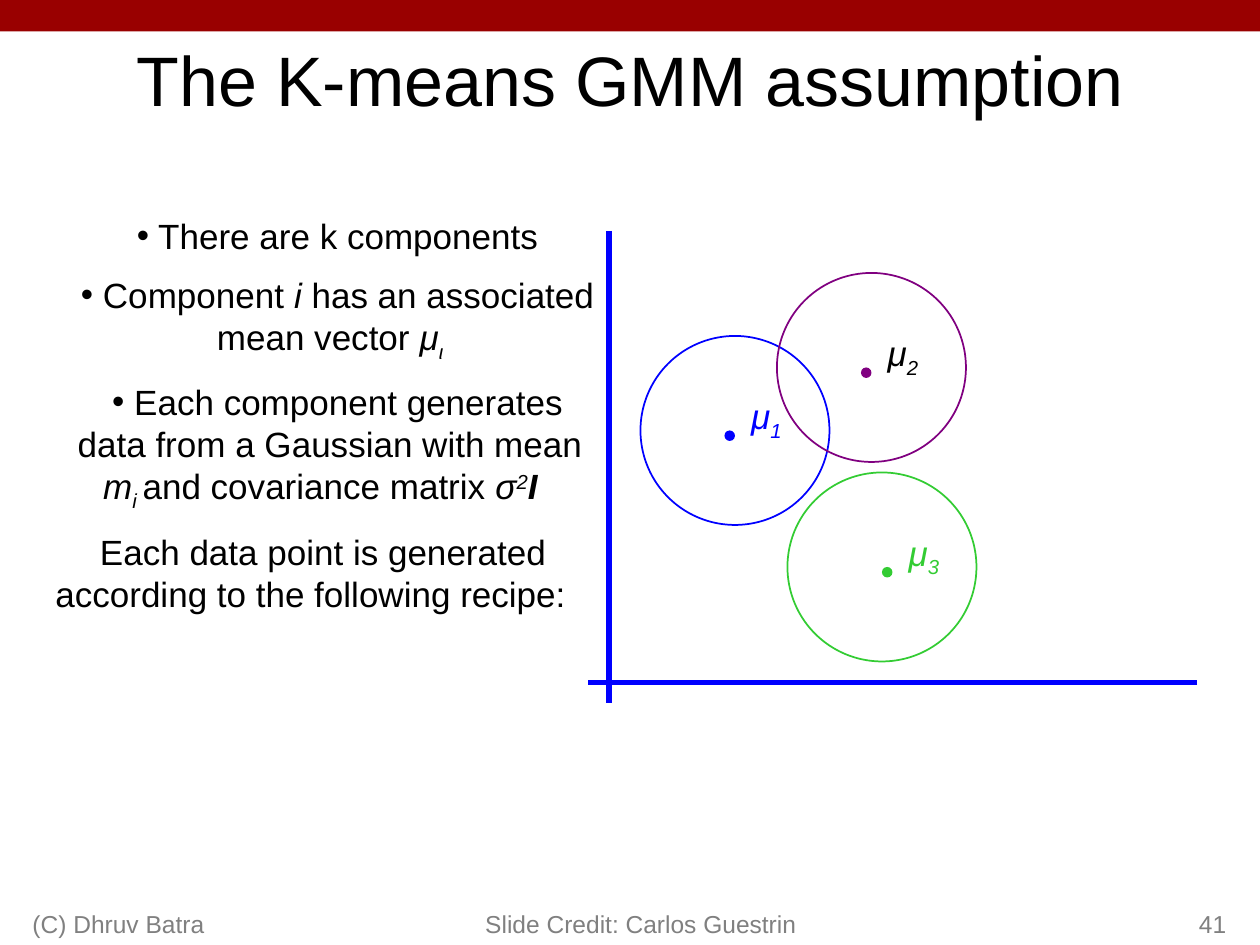
from pptx import Presentation
from pptx.dml.color import RGBColor
from pptx.enum.shapes import MSO_CONNECTOR, MSO_SHAPE
from pptx.enum.text import MSO_ANCHOR, PP_ALIGN
from pptx.oxml.ns import qn
from pptx.util import Inches, Pt
from lxml import etree

LEFT, CENTER, RIGHT = PP_ALIGN.LEFT, PP_ALIGN.CENTER, PP_ALIGN.RIGHT
TOP, MIDDLE, BOTTOM = MSO_ANCHOR.TOP, MSO_ANCHOR.MIDDLE, MSO_ANCHOR.BOTTOM
OVAL, RECTANGLE = MSO_SHAPE.OVAL, MSO_SHAPE.RECTANGLE
FONT, BLACK, GREY, RED, BLUE = "Arial", "000000", "808080", "990000", "0000FF"

# Content: a run is (text, style); i italic, b bold, _ subscript, ^ superscript
TITLE = "The K-means GMM assumption"
BULLETS = [
    [(" There are k components", "")],
    [(" Component ", ""), ("i", "i"), (" has an associated mean vector ", ""),
     ("μ", "i"), ("ι", "i_")],
    [(" Each component generates data from a Gaussian with mean ", ""),
     ("m", "i"), ("i ", "i_"), ("and covariance matrix ", ""),
     ("σ", "i"), ("2", "i^"), ("Ι  ", "ib")],
]
RECIPE = [("Each data point is generated according to the following recipe: ", "")]
# Grid cells (column, row) of each cluster's circle and mean
CLUSTERS = [
    {"circle": (61, 32), "mean": (69, 41), "color": BLUE, "label": BLUE},
    {"circle": (74, 26), "mean": (82, 35), "color": "800080", "label": BLACK},
    {"circle": (75, 45), "mean": (84, 54), "color": "33CC33", "label": "33CC33"},
]
AXES = [((58, 22), (58, 67)), ((114, 65), (56, 65))]
FOOTERS = [("Slide Credit: Carlos Guestrin", 3.5, 2.92, RIGHT),
           ("(C) Dhruv Batra", 0.16, 3.17, LEFT),
           ("41", 7.75, 2.08, RIGHT)]
BASELINES = {"_": "-25000", "^": "30000"}
BULLET_MARGIN, FIRST_LINE = Inches(0.23), Inches(0.12)


def cell(count):
    """Length of grid cells, twelve to the inch."""
    return Inches(count / 12)


def rgb(value):
    return RGBColor.from_string(value)


def write(paragraph, runs, size, color, alignment):
    paragraph.alignment = alignment
    for text, style in runs:
        run = paragraph.add_run()
        run.text = text
        font = run.font
        font.name, font.size, font.color.rgb = FONT, Pt(size), rgb(color)
        font.italic, font.bold = "i" in style, "b" in style
        for mark in BASELINES:
            if mark in style:
                run._r.get_or_add_rPr().set("baseline", BASELINES[mark])


def add_text(box, paragraphs, size, color, alignment, anchor=TOP):
    text_box = slide.shapes.add_textbox(*box)
    frame = text_box.text_frame
    frame.word_wrap, frame.vertical_anchor = True, anchor
    for number, runs in enumerate(paragraphs):
        paragraph = frame.add_paragraph() if number else frame.paragraphs[0]
        if number:
            paragraph.space_before = Pt(size / 2)
        write(paragraph, runs, size, color, alignment)
    return frame


def add_shape(kind, box, fill=None, line=None):
    shape = slide.shapes.add_shape(kind, *box)
    shape.shadow.inherit = False
    if fill:
        shape.fill.solid()
        shape.fill.fore_color.rgb = rgb(fill)
    else:
        shape.fill.background()
    if line:
        shape.line.color.rgb, shape.line.width = rgb(line), Pt(1)
    else:
        shape.line.fill.background()


presentation = Presentation()
presentation.slide_width, presentation.slide_height = Inches(10), Inches(7.5)
slide = presentation.slides.add_slide(presentation.slide_layouts[5])

# Top bar and title
add_shape(RECTANGLE, (0, 0, presentation.slide_width, Inches(0.25)), fill=RED)
title = slide.shapes.title
title.left, title.top, title.width, title.height = map(Inches, (0.75, 0.25, 8.5, 0.75))
title.text_frame.vertical_anchor = MIDDLE
write(title.text_frame.paragraphs[0], [(TITLE, "")], 40, BLACK, CENTER)

# Assumptions: bullets, then the unbulleted recipe line
body = add_text(map(Inches, (0.17, 1.65, 4.67, 3.27)), BULLETS + [RECIPE], 20, BLACK, CENTER)
for number, paragraph in enumerate(body.paragraphs):
    bulleted = number < len(BULLETS)
    properties = paragraph._p.get_or_add_pPr()
    properties.set("marL", str(BULLET_MARGIN if bulleted else 0))
    properties.set("indent", str(FIRST_LINE))
    if bulleted:
        etree.SubElement(properties, qn("a:buFont")).set("typeface", FONT)
        etree.SubElement(properties, qn("a:buChar")).set("char", "•")

# Axes
for start, end in AXES:
    axis = slide.shapes.add_connector(MSO_CONNECTOR.STRAIGHT, *map(cell, start + end))
    axis.line.color.rgb, axis.line.width = rgb(BLUE), Pt(3)
    etree.SubElement(axis._element.spPr, qn("a:effectLst"))

# Clusters: mean point, its label up and right of it, and the circle
for number, cluster in enumerate(CLUSTERS, 1):
    column, row = cluster["mean"]
    add_shape(OVAL, map(cell, (column, row, 1, 1)), fill=cluster["color"])
    add_text(map(cell, (column + 1, row - 4, 6, 5.2)),
             [[("μ", "i"), (str(number), "i_")]], 20, cluster["label"], CENTER)
    add_shape(OVAL, map(cell, cluster["circle"] + (18, 18)), line=cluster["color"])

# Footer
for text, left, width, alignment in FOOTERS:
    add_text(map(Inches, (left, 7, width, 0.5)), [[(text, "")]], 14, GREY, alignment, BOTTOM)

presentation.save("out.pptx")
